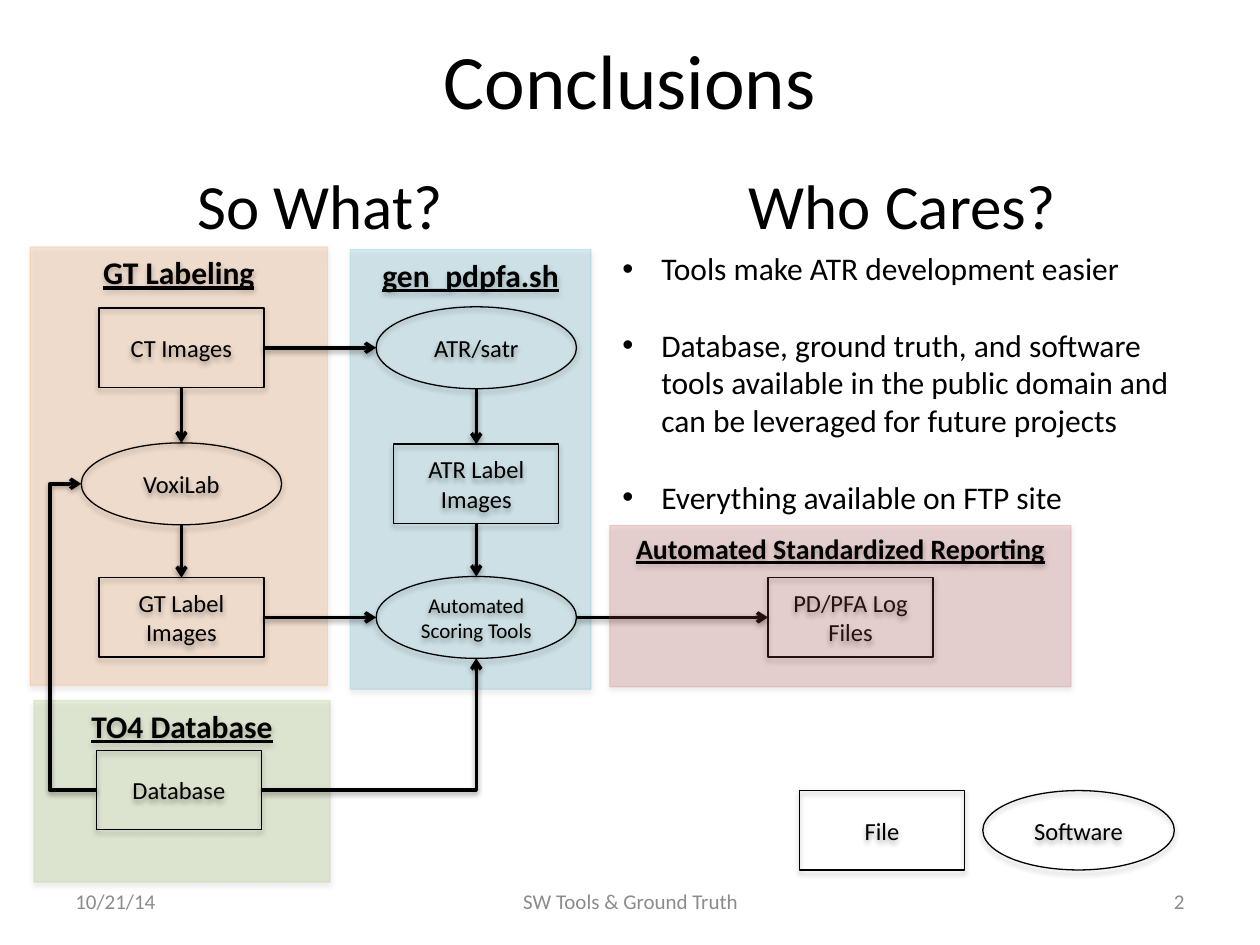
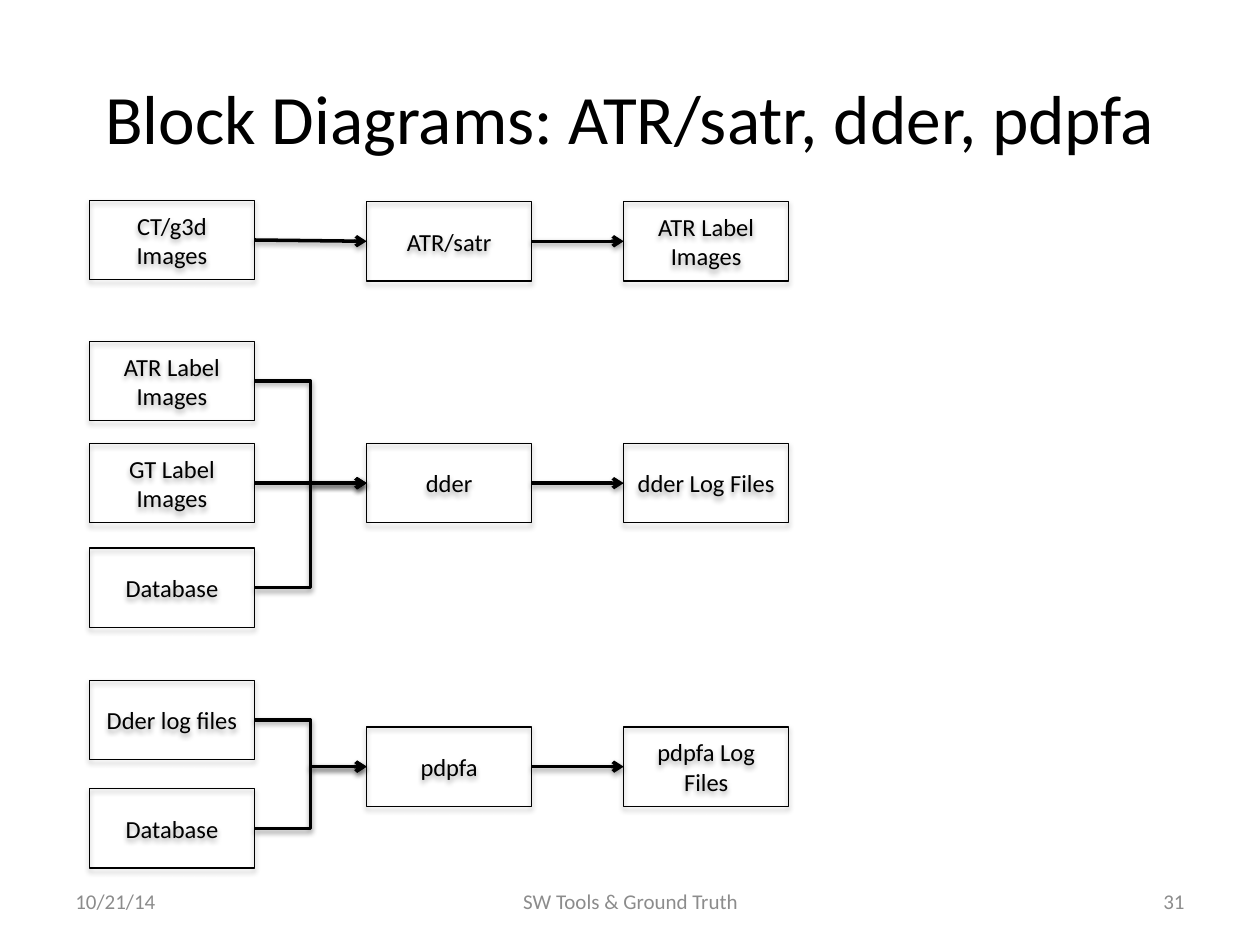
"""Build two slides of block diagrams about ATR software tools."""
from pptx import Presentation
from pptx.dml.color import RGBColor
from pptx.enum.shapes import MSO_CONNECTOR as CXN, MSO_SHAPE as SHP
from pptx.enum.text import MSO_ANCHOR as ANC, PP_ALIGN as AL
from pptx.oxml import parse_xml
from pptx.oxml.ns import nsdecls, qn
from pptx.util import Inches, Pt

C = {"ink": "000000", "footer": "8C8C8C", "labeling": "F79646",
     "database": "9BBB59", "scoring": "4BACC6", "reporting": "C0504D"}
FONT = "Calibri"
RECT, OVAL = SHP.RECTANGLE, SHP.OVAL
SIZE = {RECT: (1.31, 0.63), OVAL: (1.59, 0.65)}
TOP, LEFT, BOTTOM, RIGHT = range(4)
SHADOW = ('<a:effectLst %s><a:outerShdw blurRad="40000" dist="%d" dir="5400000" rotWithShape="0">'
          '<a:srgbClr val="000000"><a:alpha val="%d"/></a:srgbClr></a:outerShdw></a:effectLst>')


def put(slide, box, paras, size, kind=None, al=AL.CENTER, anchor=ANC.MIDDLE,
        color="ink", panel=None, bullets=False):
    at = [Inches(v) for v in box]
    sp = slide.shapes.add_shape(kind, *at) if kind else slide.shapes.add_textbox(*at)
    if kind:
        sp.line.color.rgb = RGBColor.from_string(C[panel or "ink"])
        sp.line.width = Pt(0.75)
        sp.fill.background()
        if panel:
            sp.fill.solid()
            sp.fill.fore_color.rgb = RGBColor.from_string(C[panel])
            for clr in sp._element.spPr.iter(qn("a:srgbClr")):
                clr.append(parse_xml('<a:alpha %s val="20000"/>' % nsdecls("a")))
        sp._element.spPr.append(parse_xml(SHADOW % (nsdecls("a"), 23000, 35000)))
    tf = sp.text_frame
    tf.word_wrap = True
    tf.vertical_anchor = anchor
    for i, words in enumerate(paras):
        p = tf.add_paragraph() if i else tf.paragraphs[0]
        p.alignment = al
        if bullets:
            p.space_before = Pt(22 if i else 0)
            pPr = p._p.get_or_add_pPr()
            pPr.set("marL", str(Inches(0.31)))
            pPr.set("indent", str(-Inches(0.31)))
            pPr.append(parse_xml('<a:buFont %s typeface="Arial"/>' % nsdecls("a")))
            pPr.append(parse_xml('<a:buChar %s char="•"/>' % nsdecls("a")))
        r = p.add_run()
        r.text = words
        r.font.name, r.font.size = FONT, Pt(size)
        r.font.color.rgb = RGBColor.from_string(C[color])
        if panel:
            r.font.bold = r.font.underline = True
    return sp


def link(slide, a, a_side, b, b_side, bend=None, adj=None):
    c = slide.shapes.add_connector(CXN.ELBOW if bend else CXN.STRAIGHT, 0, 0, 0, 0)
    c.begin_connect(a, a_side)
    c.end_connect(b, b_side)
    for tag, sp, side in (("a:stCxn", a, a_side), ("a:endCxn", b, b_side)):
        if sp.auto_shape_type == OVAL:
            next(c._element.iter(qn(tag))).set("idx", str(2 * side))
    spPr = c._element.spPr
    if bend:
        geom = spPr.find(qn("a:prstGeom"))
        geom.set("prst", bend)
        if adj:
            geom.find(qn("a:avLst")).append(
                parse_xml('<a:gd %s name="adj1" fmla="val %d"/>' % (nsdecls("a"), adj)))
    c.line.color.rgb = RGBColor.from_string(C["ink"])
    c.line.width = Pt(2)
    c.line._ln.append(parse_xml('<a:tailEnd %s type="arrow"/>' % nsdecls("a")))
    spPr.append(parse_xml(SHADOW % (nsdecls("a"), 20000, 38000)))


prs = Presentation()
prs.slide_width, prs.slide_height = Inches(10), Inches(7.5)

slides = []
for title, top, size, number in (
        ("Conclusions", 0, 44, "2"),
        ("Block Diagrams: ATR/satr, dder, pdpfa", 0.3, 39.6, "31")):
    s = prs.slides.add_slide(prs.slide_layouts[6])
    put(s, (0.5, top, 9, 1.25), [title], size)
    for x, w, words, al in ((0.5, 2.33, "10/21/14", AL.LEFT),
                            (3.42, 3.17, "SW Tools & Ground Truth", AL.CENTER),
                            (7.17, 2.33, number, AL.RIGHT)):
        put(s, (x, 6.95, w, 0.4), [words], 12, al=al, color="footer")
    slides.append(s)
conclusions, diagrams = slides

s = conclusions
for box, words, panel in (((0.24, 1.96, 2.36, 3.48), "GT Labeling", "labeling"),
                          ((0.27, 5.56, 2.35, 1.44), "TO4 Database", "database"),
                          ((2.78, 1.98, 1.91, 3.49), "gen_pdpfa.sh", "scoring")):
    put(s, box, [words], 18, RECT, anchor=ANC.TOP, panel=panel)

cols = {"label": 1.44, "base": 1.42, "score": 3.78, "report": 6.75, "file": 7.0, "soft": 8.56}
rows = [2.76, 3.84, 4.9, 6.27, 6.59]
node = {}
for name, kind, col, row, words in (
        ("ct", RECT, "label", 0, "CT Images"),
        ("lab", OVAL, "label", 1, "VoxiLab"),
        ("gt", RECT, "label", 2, "GT Label Images"),
        ("db", RECT, "base", 3, "Database"),
        ("atr", OVAL, "score", 0, "ATR/satr"),
        ("atr_label", RECT, "score", 1, "ATR Label Images"),
        ("tools", OVAL, "score", 2, "Automated Scoring Tools"),
        ("log", RECT, "report", 2, "PD/PFA Log Files"),
        ("file", RECT, "file", 4, "File"),
        ("software", OVAL, "soft", 4, "Software")):
    w, h = (1.52, 0.63) if name == "software" else SIZE[kind]
    box = (cols[col] - w / 2, rows[row] - h / 2, w, h)
    node[name] = put(s, box, [words], 12 if name == "tools" else 14, kind)

for a, b in (("ct", "lab"), ("lab", "gt"), ("atr", "atr_label"), ("atr_label", "tools")):
    link(s, node[a], BOTTOM, node[b], TOP)
for a, b in (("ct", "atr"), ("gt", "tools"), ("tools", "log")):
    link(s, node[a], RIGHT, node[b], LEFT)
link(s, node["db"], RIGHT, node["tools"], BOTTOM, "bentConnector2")
link(s, node["db"], LEFT, node["lab"], LEFT, "bentConnector3", 307100)

put(s, (4.84, 4.17, 3.66, 1.28), ["Automated Standardized Reporting"], 16, RECT,
    anchor=ANC.TOP, panel="reporting")
for x, words in ((0.39, "So What?"), (5.01, "Who Cares?")):
    put(s, (x, 1.27, 4.3, 0.71), [words], 36, anchor=ANC.TOP)
put(s, (4.84, 1.93, 4.78, 2.52),
    ["Tools make ATR development easier",
     "Database, ground truth, and software tools available in the public domain "
     "and can be leveraged for future projects",
     "Everything available on FTP site"],
    18, al=AL.LEFT, anchor=ANC.TOP, bullets=True)

s = diagrams
w, h = SIZE[RECT]
inputs_x, program_x, output_x = 0.71, 2.91, 4.95
for y, program, output, inputs in (
        (1.6, "ATR/satr", "ATR Label Images", [(1.59, "CT/g3d Images")]),
        (3.52, "dder", "dder Log Files", [(2.71, "ATR Label Images"),
                                          (3.52, "GT Label Images"),
                                          (4.35, "Database")]),
        (5.77, "pdpfa", "pdpfa Log Files", [(5.4, "Dder log files"), (6.26, "Database")])):
    prog = put(s, (program_x, y, w, h), [program], 14, RECT)
    out = put(s, (output_x, y, w, h), [output], 14, RECT)
    link(s, prog, RIGHT, out, LEFT)
    for in_y, words in inputs:
        sp = put(s, (inputs_x, in_y, w, h), [words], 14, RECT)
        link(s, sp, RIGHT, prog, LEFT, "bentConnector3" if abs(in_y - y) > 0.1 else None)

prs.save("out.pptx")
